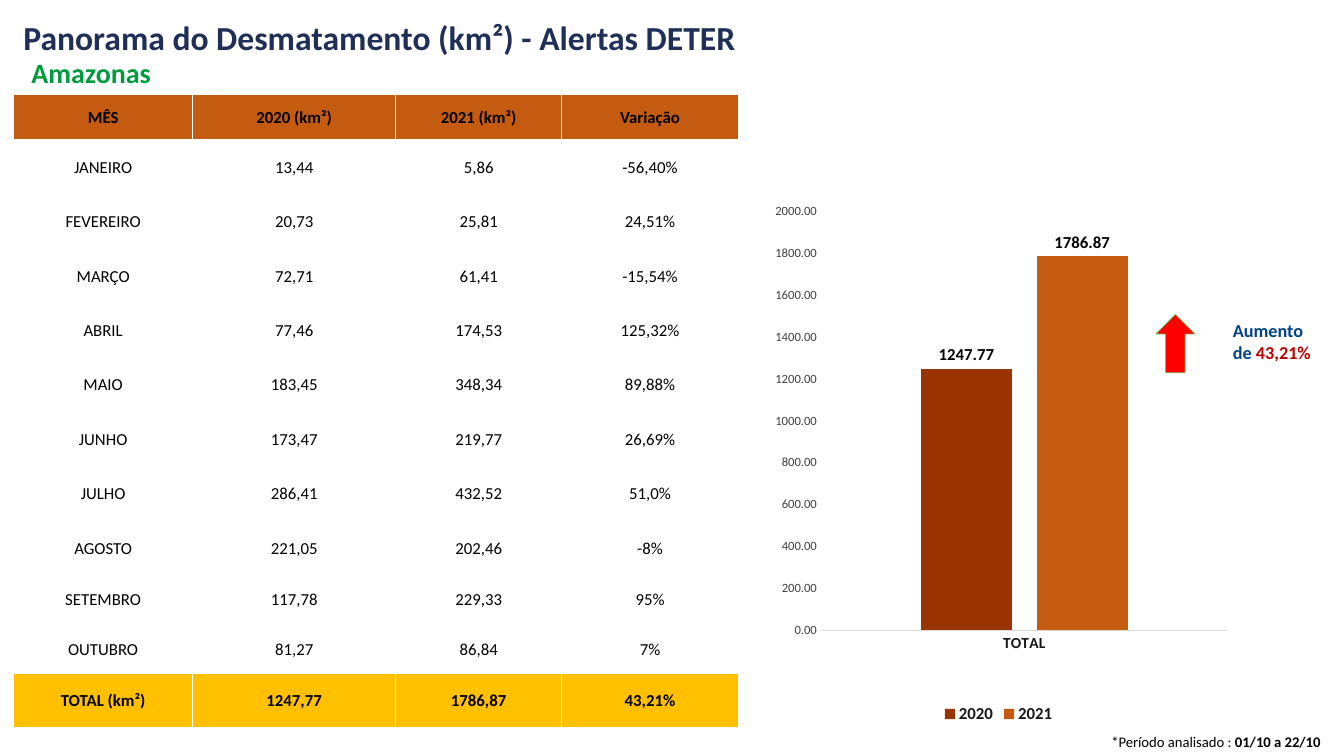
from pptx import Presentation
from pptx.chart.data import CategoryChartData as ChartData
from pptx.dml.color import RGBColor as Rgb
from pptx.enum.chart import XL_CHART_TYPE as Kind, XL_LABEL_POSITION as Spot
from pptx.enum.chart import XL_LEGEND_POSITION as Side, XL_TICK_MARK as Tick
from pptx.enum.shapes import MSO_SHAPE as Geo
from pptx.enum.text import MSO_ANCHOR as Anchor, MSO_AUTO_SIZE as Auto, PP_ALIGN as Align
from pptx.oxml import parse_xml
from pptx.oxml.ns import nsdecls
from pptx.util import Inches, Pt

WIDE, HIGH = Inches(13.33), Inches(7.5)
BLACK, WHITE, RUST, GOLD, INK = "000000", "FFFFFF", "C55A11", "FFC000", "181717"

# Column widths and row heights as percent of the slide
COLS = [13.35, 15.08, 12.38, 13.12]
ROWS = [6] + [7.2] * 8 + [6.5] * 2 + [7.2]
DATA = [
    ("MÊS", "2020 (km²)", "2021 (km²)", "Variação"),
    ("JANEIRO", "13,44", "5,86", "-56,40%"),
    ("FEVEREIRO", "20,73", "25,81", "24,51%"),
    ("MARÇO", "72,71", "61,41", "-15,54%"),
    ("ABRIL", "77,46", "174,53", "125,32%"),
    ("MAIO", "183,45", "348,34", "89,88%"),
    ("JUNHO", "173,47", "219,77", "26,69%"),
    ("JULHO", "286,41", "432,52", "51,0%"),
    ("AGOSTO", "221,05", "202,46", "-8%"),
    ("SETEMBRO", "117,78", "229,33", "95%"),
    ("OUTUBRO", "81,27", "86,84", "7%"),
    ("TOTAL (km²)", "1247,77", "1786,87", "43,21%"),
]


def across(share):
    return int(WIDE * share / 100)


def down(share):
    return int(HIGH * share / 100)


def area(x, y, w, h):
    return across(x), down(y), across(w), down(h)


def tint(code):
    return Rgb.from_string(code)


def paint(fill, code):
    fill.solid()
    fill.fore_color.rgb = tint(code)


def apply(target, **values):
    for name, value in values.items():
        setattr(target, name, value)


def style(font, size, code, bold=False):
    apply(font, name="Calibri", size=Pt(size), bold=bold)
    font.color.rgb = tint(code)


def write(par, runs, size, align=Align.LEFT):
    par.alignment = align
    for words, code, bold in runs:
        run = par.add_run()
        run.text = words
        style(run.font, size, code, bold)


def add_text(slide, spot, lines, size, wrap=False, align=Align.LEFT):
    frame = slide.shapes.add_textbox(*area(*spot)).text_frame
    apply(frame, word_wrap=wrap, auto_size=Auto.SHAPE_TO_FIT_TEXT)
    for num, runs in enumerate(lines):
        par = frame.add_paragraph() if num else frame.paragraphs[0]
        write(par, runs, size, align)


def edge(cell):
    props = cell._tc.get_or_add_tcPr()
    for side in "LRTB":
        props.append(parse_xml(
            f'<a:ln{side} {nsdecls("a")} w="12700"><a:solidFill>'
            f'<a:srgbClr val="{WHITE}"/></a:solidFill></a:ln{side}>'))


def add_grid(slide, x, y):
    spot = area(x, y, sum(COLS), sum(ROWS))
    table = slide.shapes.add_table(len(ROWS), len(COLS), *spot).table
    apply(table, first_row=False, horz_banding=False)
    for col, share in zip(table.columns, COLS):
        col.width = across(share)
    fills = [RUST] + [WHITE] * (len(ROWS) - 2) + [GOLD]
    for row, share, words, code in zip(table.rows, ROWS, DATA, fills):
        row.height = down(share)
        for cell, word in zip(row.cells, words):
            apply(cell, vertical_anchor=Anchor.MIDDLE, margin_left=Inches(0.01),
                  margin_right=Inches(0.01), margin_top=Inches(0.01), margin_bottom=0)
            edge(cell)
            paint(cell.fill, code)
            write(cell.text_frame.paragraphs[0], [(word, BLACK, code != WHITE)],
                  12, Align.CENTER)


def place_plot(chart, **shares):
    plot = chart.element.xpath(".//c:plotArea")[0]
    for old in plot.xpath("./c:layout"):
        plot.remove(old)
    sizes = "".join(f'<c:{name} val="{val}"/>' for name, val in shares.items())
    plot.insert(0, parse_xml(
        f'<c:layout {nsdecls("c")}><c:manualLayout><c:layoutTarget val="inner"/>'
        f'<c:xMode val="edge"/><c:yMode val="edge"/>{sizes}'
        f'</c:manualLayout></c:layout>'))


def add_bars(slide, spot):
    data = ChartData(number_format="0.00")
    data.categories = ["TOTAL"]
    data.add_series("2020", [1247.77])
    data.add_series("2021", [1786.87])
    chart = slide.shapes.add_chart(Kind.COLUMN_CLUSTERED, *area(*spot), data).chart
    apply(chart, has_title=False, has_legend=True)
    style(chart.font, 10, "404040")
    place_plot(chart, x=0.12, y=0.05, w=0.87, h=0.77)

    # Legend and axes
    apply(chart.legend, position=Side.BOTTOM, include_in_layout=False)
    style(chart.legend.font, 12, INK, True)
    cat, val = chart.category_axis, chart.value_axis
    for axis in (cat, val):
        apply(axis, major_tick_mark=Tick.NONE, minor_tick_mark=Tick.NONE,
              has_major_gridlines=False)
    style(cat.tick_labels.font, 11, INK, True)
    style(val.tick_labels.font, 9, "404040")
    paint(cat.format.line.fill, "D9D9D9")
    cat.format.line.width = Pt(0.75)
    val.format.line.fill.background()
    apply(val, minimum_scale=0, maximum_scale=2000, major_unit=200)
    apply(val.tick_labels, number_format="0.00", number_format_is_linked=False)

    # Bars and their values
    plot = chart.plots[0]
    apply(plot, gap_width=219, overlap=-27, vary_by_categories=False)
    for bar, code in zip(plot.series, ("993300", RUST)):
        paint(bar.format.fill, code)
        tags = bar.data_labels
        apply(tags, show_value=True, position=Spot.OUTSIDE_END,
              number_format="0.00", number_format_is_linked=False)
        style(tags.font, 12, BLACK, True)


def add_arrow(slide, spot):
    arrow = slide.shapes.add_shape(Geo.DOWN_ARROW, *area(*spot))
    arrow.rotation = 180
    arrow.shadow.inherit = False
    paint(arrow.fill, "FF0000")
    paint(arrow.line.fill, "70AD47")
    arrow.line.width = Pt(0.5)


def main():
    deck = Presentation()
    apply(deck, slide_width=WIDE, slide_height=HIGH)
    slide = deck.slides.add_slide(deck.slide_layouts[6])

    # Headings
    add_text(slide, (1, 1.6, 63.2, 6.7),
             [[("Panorama do Desmatamento (km²) - Alertas DETER", "202F58", True)]], 24)
    add_text(slide, (1.6, 6.7, 12.1, 5.9), [[("Amazonas", "009B3D", True)]], 20)

    # Monthly figures and the period they cover
    add_grid(slide, 1, 12.5)
    add_text(slide, (80.6, 96.3, 18.4, 3.7),
             [[("*Período analisado : ", BLACK, False), ("01/10 a 22/10", BLACK, True)]],
             10.5, align=Align.RIGHT)

    # Yearly totals and their rise
    add_arrow(slide, (86, 41.6, 2.9, 7.7))
    add_text(slide, (91, 41.6, 8, 7.2),
             [[("Aumento", "004386", True)],
              [("de ", "004386", True), ("43,21%", "C00000", True)]], 13, wrap=True)
    add_bars(slide, (56.9, 24.4, 34.8, 71.9))

    deck.save("out.pptx")


if __name__ == "__main__":
    main()
